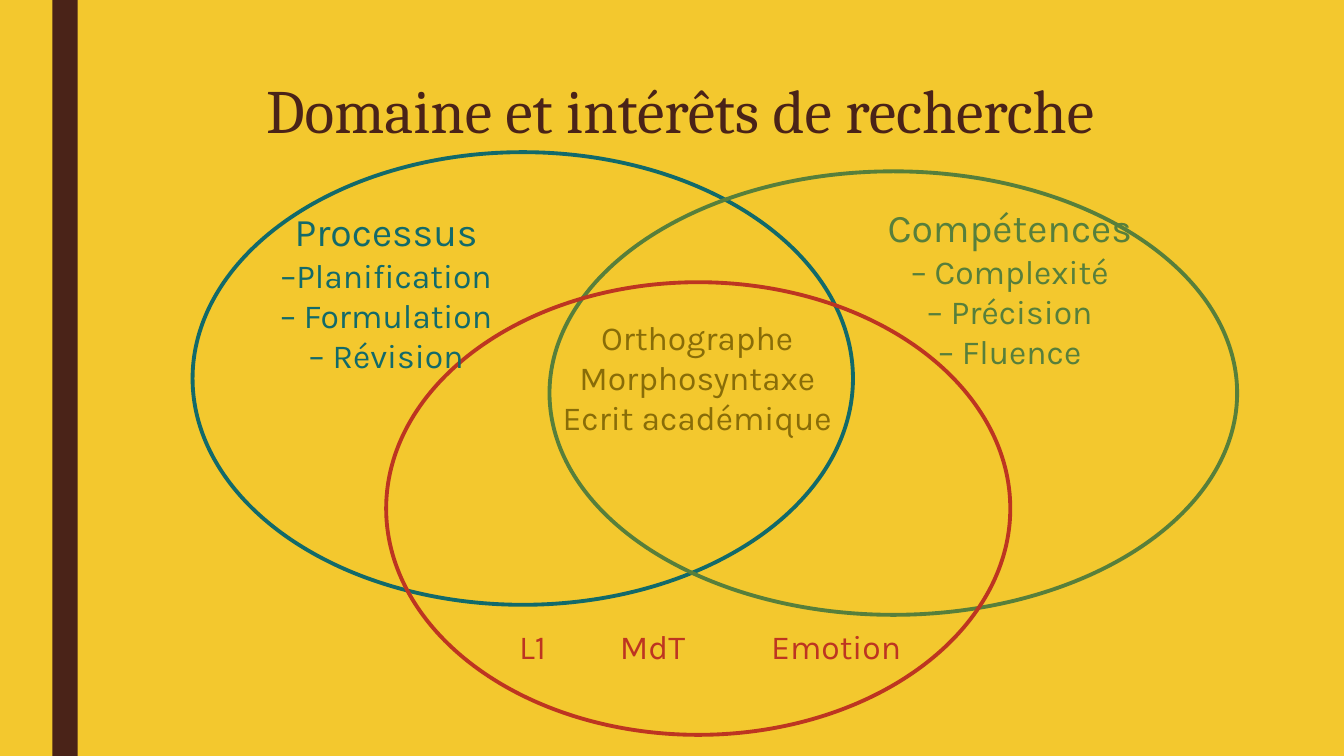
from lxml.etree import SubElement
from pptx import Presentation
from pptx.dml.color import RGBColor
from pptx.enum.shapes import MSO_SHAPE as Shape
from pptx.enum.text import MSO_ANCHOR as Anchor, MSO_AUTO_SIZE as AutoSize, PP_ALIGN as Align
from pptx.oxml.ns import qn
from pptx.util import Inches, Pt

COLORS = {
    "background": "F3C82E",
    "brown": "4A2318",
    "teal": "126A6A",
    "green": "577F3B",
    "red": "BD3521",
    "olive": "896D08",
}


def color(name):
    """Return the named colour."""
    return RGBColor.from_string(COLORS[name])


def add_preset(slide, kind, box, fill=None, line=None):
    """Add a preset shape with an optional fill and outline."""
    shape = slide.shapes.add_shape(kind, *map(Inches, box))
    shape.shadow.inherit = False
    if fill:
        shape.fill.solid()
        shape.fill.fore_color.rgb = color(fill)
    else:
        shape.fill.background()
    if line:
        shape.line.color.rgb = color(line)
        shape.line.width = Pt(2.75)
    else:
        shape.line.fill.background()


def add_text(slide, box, lines, ink, font="Karla", align=Align.CENTER, spacing=None):
    """Add a text box from (text, size) lines and return its frame."""
    frame = slide.shapes.add_textbox(*map(Inches, box)).text_frame
    frame.word_wrap = True
    frame.auto_size = AutoSize.NONE
    frame.vertical_anchor = Anchor.TOP
    for index, (text, size) in enumerate(lines):
        paragraph = frame.add_paragraph() if index else frame.paragraphs[0]
        paragraph.alignment = align
        paragraph.line_spacing = spacing
        run = paragraph.add_run()
        run.text = text
        run.font.name = font
        run.font.size = Pt(size)
        run.font.color.rgb = color(ink)
    return frame


def add_topic(slide, box, heading, items, ink):
    """Add a heading followed by its smaller items."""
    add_text(slide, box, [(heading, 28)] + [(item, 24) for item in items], ink)


def set_tab_stops(paragraph, step, count):
    """Set evenly spaced left tab stops."""
    stops = SubElement(paragraph._p.get_or_add_pPr(), qn("a:tabLst"))
    for number in range(1, count + 1):
        SubElement(stops, qn("a:tab"), pos=str(Inches(step * number)), algn="l")


def main():
    """Build the slide and save it."""
    presentation = Presentation()
    presentation.slide_width = Inches(13.33)
    presentation.slide_height = Inches(7.5)
    slide = presentation.slides.add_slide(presentation.slide_layouts[6])
    slide.background.fill.solid()
    slide.background.fill.fore_color.rgb = color("background")

    add_preset(slide, Shape.RECTANGLE, (0.52, 0, 0.25, 7.5), fill="brown")
    add_preset(slide, Shape.OVAL, (1.91, 1.51, 6.55, 4.49), fill="background", line="teal")
    add_text(slide, (1.5, 0.75, 10.5, 1.62), [("Domaine et intérêts de recherche", 44)],
             "brown", font="Cambria", spacing=0.89)
    add_preset(slide, Shape.OVAL, (5.45, 1.7, 6.82, 4.4), line="green")
    add_preset(slide, Shape.OVAL, (3.83, 2.8, 6.19, 4.49), line="red")

    add_topic(slide, (2.65, 2.01, 2.36, 1.78), "Processus",
              ["–Planification", "– Formulation", "– Révision"], "teal")
    add_topic(slide, (8.65, 1.97, 2.73, 1.78), "Compétences",
              ["– Complexité", "– Précision", "– Fluence"], "green")
    shared = ["Orthographe", "Morphosyntaxe", "Ecrit académique"]
    add_text(slide, (5.41, 3.09, 3.01, 1.31), [(line, 24) for line in shared], "olive")
    factors = add_text(slide, (5.05, 6.16, 4.22, 0.5), [("L1\t\tMdT\t\tEmotion", 24)],
                       "red", align=Align.LEFT)
    set_tab_stops(factors.paragraphs[0], 0.5, 5)

    presentation.save("out.pptx")


if __name__ == "__main__":
    main()
